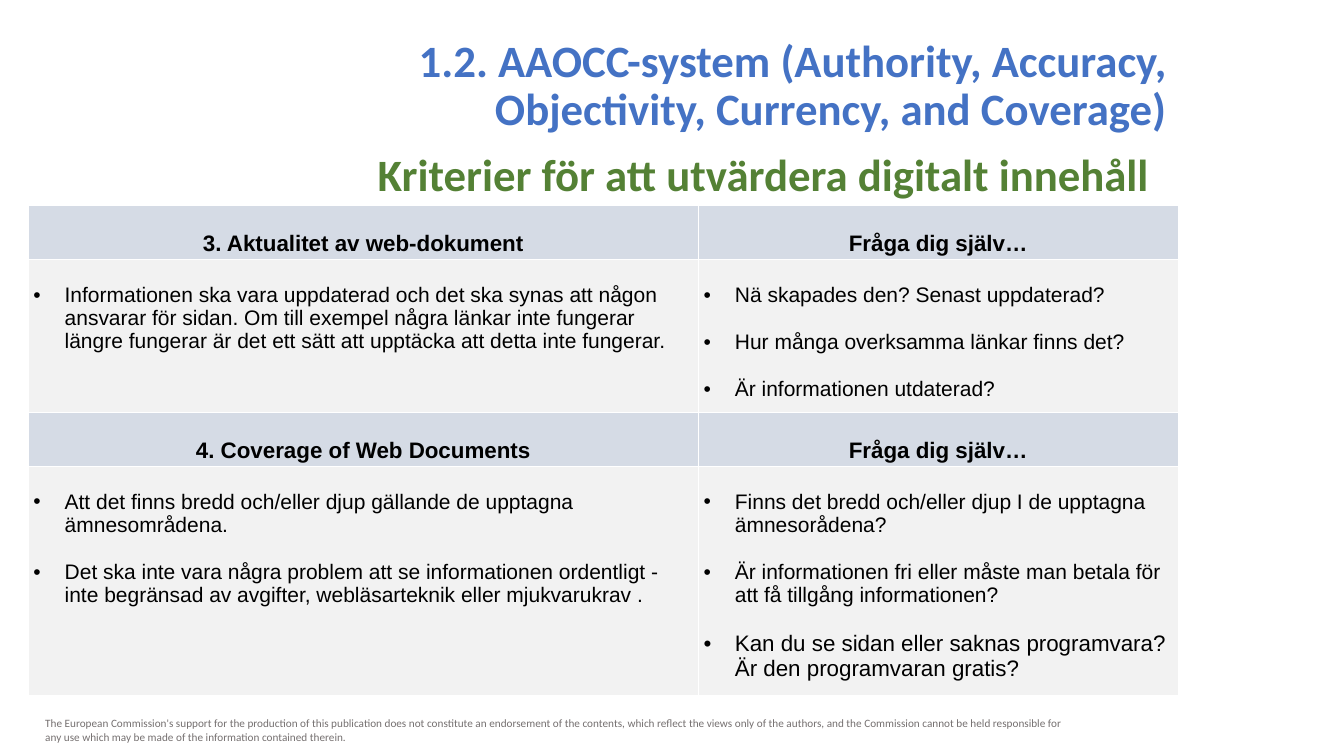
"""Build the slide on currency and coverage criteria for web documents."""
from dataclasses import dataclass

from lxml.etree import SubElement
from pptx import Presentation
from pptx.dml.color import RGBColor
from pptx.enum.text import MSO_ANCHOR, MSO_AUTO_SIZE, PP_ALIGN
from pptx.oxml import parse_xml
from pptx.oxml.ns import nsdecls, qn
from pptx.slide import Slide
from pptx.table import _Cell
from pptx.text.text import TextFrame, _Paragraph
from pptx.util import Cm, Pt

BLUE = RGBColor(0x44, 0x72, 0xC4)
GREEN = RGBColor(0x54, 0x81, 0x35)
GREY = RGBColor(0x75, 0x70, 0x70)
BLACK = RGBColor(0, 0, 0)
HEAD = RGBColor(0xD5, 0xDB, 0xE5)
BODY = RGBColor(0xF2, 0xF2, 0xF2)

LEFT = 0.71
WIDTHS = (16.89, 12.09)
HEAD_ROW = 1.36


@dataclass(frozen=True)
class Line:
    text: str
    size: float = 15


@dataclass(frozen=True)
class Topic:
    name: str
    top: float
    height: float
    facts: tuple[Line, ...]
    asks: tuple[Line, ...]


TOPICS = (
    Topic(
        "3. Aktualitet av web-dokument", 5.18, 3.85,
        (Line("Informationen ska vara uppdaterad och det ska synas att någon ansvarar för sidan. "
              "Om till exempel några länkar inte fungerar längre fungerar är det ett sätt "
              "att upptäcka att detta inte fungerar."),),
        (Line("Nä skapades den? Senast uppdaterad?"),
         Line("Hur många overksamma länkar finns det?"),
         Line("Är informationen utdaterad?")),
    ),
    Topic(
        "4. Coverage of Web Documents", 10.39, 5.77,
        (Line("Att det finns bredd och/eller djup gällande de upptagna ämnesområdena."),
         Line("Det ska inte vara några problem att se informationen ordentligt - "
              "inte begränsad av avgifter, webläsarteknik eller mjukvarukrav .")),
        (Line("Finns det bredd och/eller djup I de upptagna ämnesorådena?"),
         Line("Är informationen fri eller måste man betala för att få tillgång informationen?"),
         Line("Kan du se sidan eller saknas programvara? Är den programvaran gratis?", 16)),
    ),
)


def add_dot(para: _Paragraph) -> None:
    """Give a paragraph a black bullet and a hanging indent."""
    props = para._p.get_or_add_pPr()
    props.set("marL", str(Cm(0.79)))
    props.set("indent", str(-Cm(0.79)))
    tint = SubElement(props, qn("a:buClr"))
    SubElement(tint, qn("a:srgbClr"), val=str(BLACK))
    SubElement(props, qn("a:buFont"), typeface="Arial")
    SubElement(props, qn("a:buChar"), char="•")


def write(frame: TextFrame, *lines: Line, font: str = "Calibri", color: RGBColor = BLACK,
          bold: bool = False, align: PP_ALIGN = PP_ALIGN.LEFT, dots: bool = False,
          gap: float = 0, pitch: float | None = None) -> None:
    """Fill a text frame with formatted paragraphs."""
    frame.word_wrap = True
    for index, line in enumerate(lines):
        para = frame.add_paragraph() if index else frame.paragraphs[0]
        if dots:
            add_dot(para)
        para.alignment = align
        para.space_before = Pt(gap if index else 0)
        if pitch:
            para.line_spacing = pitch
        run = para.add_run()
        run.text = line.text
        run.font.name = font
        run.font.size = Pt(line.size)
        run.font.bold = bold
        run.font.color.rgb = color


def style(cell: _Cell, fill: RGBColor, top: float) -> None:
    """Set the fill, margins and white borders of a cell."""
    cell.fill.solid()
    cell.fill.fore_color.rgb = fill
    cell.margin_left = cell.margin_right = Cm(0.13)
    cell.margin_top, cell.margin_bottom = Cm(top), 0
    cell.vertical_anchor = MSO_ANCHOR.TOP
    props = cell._tc.get_or_add_tcPr()
    for index, side in enumerate("LRTB"):
        props.insert(index, parse_xml(
            f'<a:ln{side} {nsdecls("a")} w="{Pt(1)}"><a:solidFill>'
            f'<a:srgbClr val="FFFFFF"/></a:solidFill></a:ln{side}>'))


def add_topic(slide: Slide, topic: Topic) -> None:
    """Draw one criterion as a table of facts and questions."""
    table = slide.shapes.add_table(
        2, 2, Cm(LEFT), Cm(topic.top), Cm(sum(WIDTHS)), Cm(HEAD_ROW + topic.height)).table
    table.first_row = table.horz_banding = False
    for row, height in zip(table.rows, (HEAD_ROW, topic.height)):
        row.height = Cm(height)
    pairs = ((topic.name, topic.facts), ("Fråga dig själv…", topic.asks))
    for col, (width, (name, lines)) in enumerate(zip(WIDTHS, pairs)):
        table.columns[col].width = Cm(width)
        head, body = table.cell(0, col), table.cell(1, col)
        style(head, HEAD, 0.65)
        write(head.text_frame, Line(name, 16), font="Arial", bold=True, align=PP_ALIGN.CENTER)
        style(body, BODY, 0.6)
        write(body.text_frame, *lines, font="Arial", dots=True, gap=17)


def main() -> None:
    """Build and save the slide."""
    deck = Presentation()
    deck.slide_width, deck.slide_height = Cm(33.87), Cm(19.05)
    slide = deck.slides.add_slide(deck.slide_layouts[5])
    shapes = slide.shapes

    note = shapes.add_textbox(Cm(0.89), Cm(17.93), Cm(26.57), Cm(0.94))
    write(note.text_frame, Line(
        "The European Commission's support for the production of this publication does not "
        "constitute an endorsement of the contents, which reflect the views only of the authors, "
        "and the Commission cannot be held responsible for any use which may be made of the "
        "information contained therein.", 8), color=GREY)

    title = shapes.title
    title.left, title.top, title.width, title.height = Cm(6.25), Cm(0.84), Cm(23.42), Cm(0.79)
    title.text_frame.auto_size = MSO_AUTO_SIZE.NONE
    title.text_frame.vertical_anchor = MSO_ANCHOR.TOP
    write(title.text_frame,
          Line("1.2. AAOCC-system (Authority, Accuracy, Objectivity, Currency, and Coverage)", 32),
          color=BLUE, bold=True, align=PP_ALIGN.RIGHT, pitch=0.9)

    lead = shapes.add_textbox(Cm(9.27), Cm(3.56), Cm(20.42), Cm(1.63))
    write(lead.text_frame, Line("Kriterier för att utvärdera digitalt innehåll", 32),
          color=GREEN, bold=True)

    for topic in TOPICS:
        add_topic(slide, topic)
    deck.save("out.pptx")


if __name__ == "__main__":
    main()
